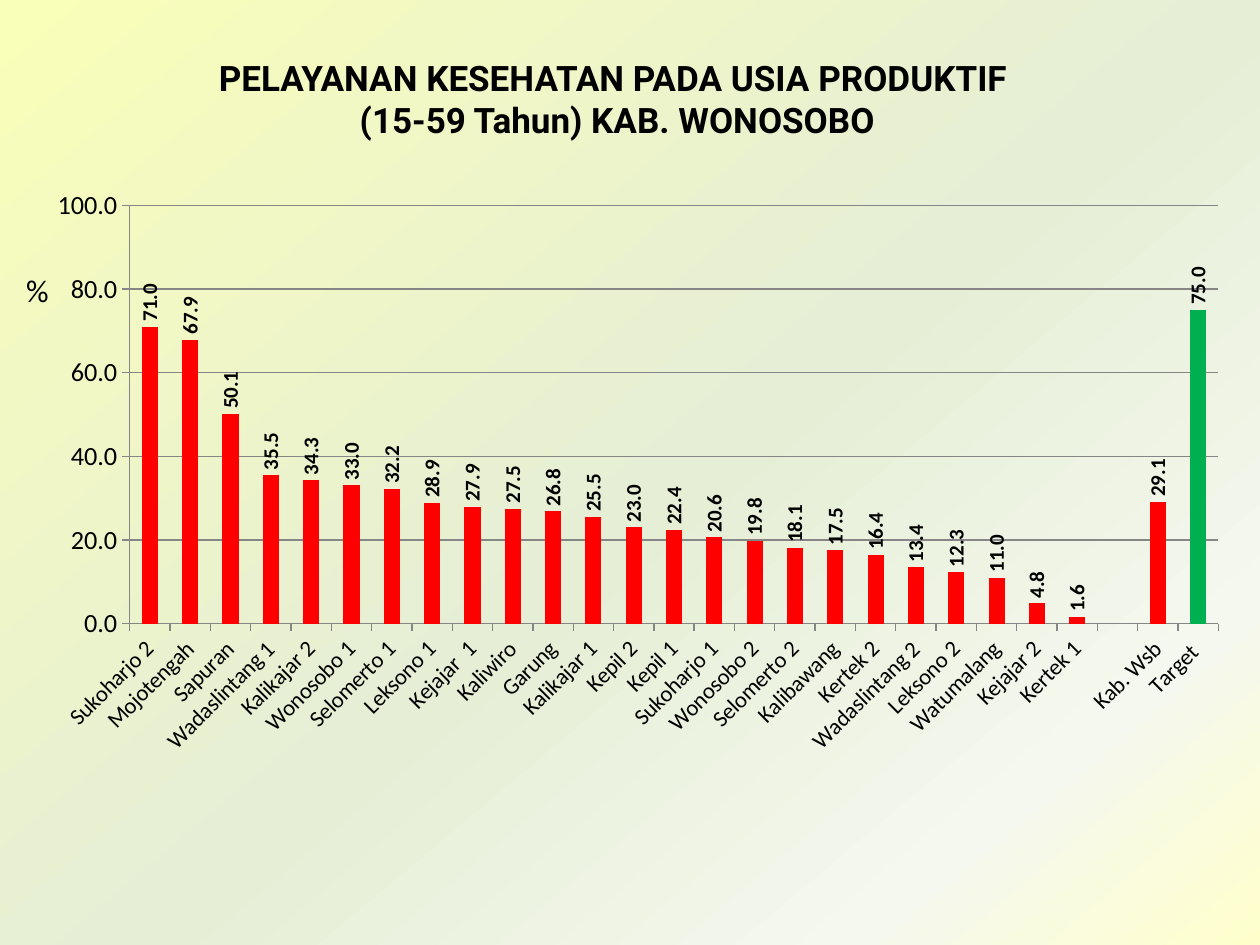
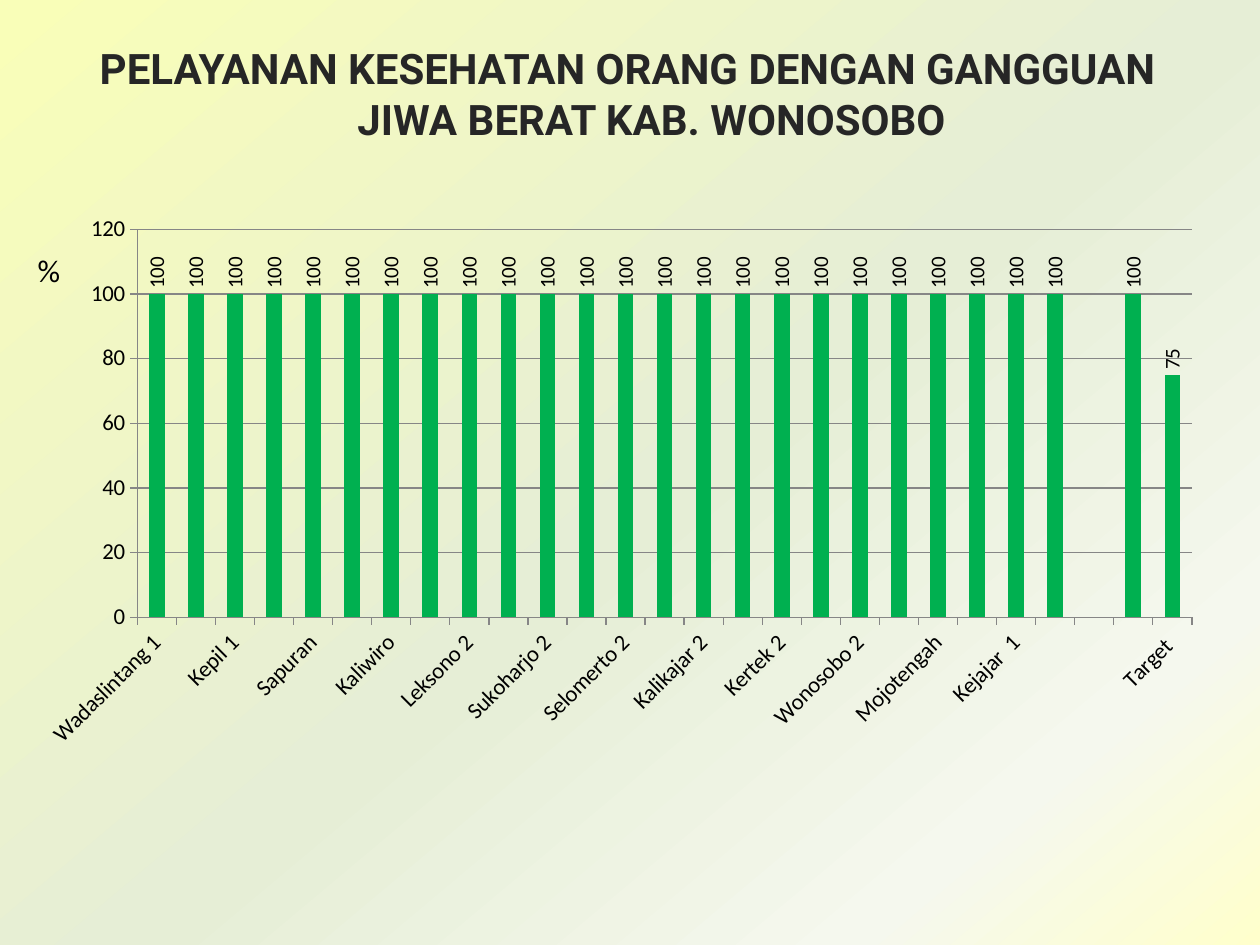
from lxml import etree
from pptx import Presentation
from pptx.chart.data import CategoryChartData
from pptx.dml.color import RGBColor
from pptx.enum.chart import XL_CHART_TYPE, XL_LABEL_POSITION, XL_TICK_MARK
from pptx.enum.text import MSO_ANCHOR, PP_ALIGN
from pptx.oxml.ns import qn
from pptx.util import Inches, Pt

COLUMNS = XL_CHART_TYPE.COLUMN_CLUSTERED
OUTSIDE_END = XL_LABEL_POSITION.OUTSIDE_END
TICK_OUTSIDE = XL_TICK_MARK.OUTSIDE
TOP, MIDDLE = MSO_ANCHOR.TOP, MSO_ANCHOR.MIDDLE
LEFT, CENTER = PP_ALIGN.LEFT, PP_ALIGN.CENTER

TITLE_FONT, BODY_FONT = "Roboto", "Calibri"
BLACK, DARK, GRAY = "000000", "262626", "868686"
RED, GREEN = "FF0000", "00B050"
GRADIENT_ANGLE = 50
GRADIENT_STOPS = [(0, "F9FEB8", 100), (53, "E6EED6", 100),
                  (83, "F5F8EE", 100), (100, "FFFFCC", 33)]

SUMMARY = ["", "Kab. Wsb", "Target "]
PRODUCTIVE_AGE = {
    "Sukoharjo 2": 71, "Mojotengah": 67.9, "Sapuran": 50.1,
    "Wadaslintang 1": 35.5, "Kalikajar 2": 34.3, "Wonosobo 1": 33,
    "Selomerto 1": 32.2, "Leksono 1": 28.9, "Kejajar  1": 27.9,
    "Kaliwiro": 27.5, "Garung": 26.8, "Kalikajar 1": 25.5, "Kepil 2": 23,
    "Kepil 1": 22.4, "Sukoharjo 1": 20.6, "Wonosobo 2": 19.8,
    "Selomerto 2": 18.1, "Kalibawang": 17.5, "Kertek 2": 16.4,
    "Wadaslintang 2": 13.4, "Leksono 2": 12.3, "Watumalang": 11,
    "Kejajar 2": 4.8, "Kertek 1": 1.6,
}
MENTAL_HEALTH_CENTRES = [
    "Wadaslintang 1", "Wadaslintang 2", "Kepil 1", "Kepil 2", "Sapuran",
    "Kalibawang", "Kaliwiro", "Leksono 1", "Leksono 2", "Sukoharjo 1",
    "Sukoharjo 2", "Selomerto 1", "Selomerto 2", "Kalikajar 1", "Kalikajar 2",
    "Kertek 1", "Kertek 2", "Wonosobo 1", "Wonosobo 2", "Watumalang",
    "Mojotengah", "Garung", "Kejajar  1", "Kejajar 2",
]


def color(hex_text):
    """Turn a hex string into a colour."""
    return RGBColor.from_string(hex_text)


def set_background(master):
    """Give every slide the shared diagonal gradient."""
    master.background.fill.gradient()
    gradient = master.element.find(".//" + qn("a:gradFill"))
    stops = gradient.find(qn("a:gsLst"))
    for stop in list(stops):
        stops.remove(stop)
    for position, hex_text, opacity in GRADIENT_STOPS:
        stop = etree.SubElement(stops, qn("a:gs"), pos=str(position * 1000))
        tint = etree.SubElement(stop, qn("a:srgbClr"), val=hex_text)
        if opacity < 100:
            etree.SubElement(tint, qn("a:alpha"), val=str(opacity * 1000))
    gradient.find(qn("a:lin")).set("ang", str(GRADIENT_ANGLE * 60000))


def add_text(page, text, at, size, font=BODY_FONT, ink=BLACK, bold=False,
             align=LEFT, anchor=TOP, wrap=True, hanging=0):
    """Add a text box with one format throughout."""
    box = page.shapes.add_textbox(*map(Inches, at))
    frame = box.text_frame
    frame.word_wrap = wrap
    frame.vertical_anchor = anchor
    para = frame.paragraphs[0]
    para.text = text
    para.alignment = align
    if hanging:
        properties = para._p.get_or_add_pPr()
        properties.set("marL", str(Inches(hanging)))
        properties.set("indent", str(-Inches(hanging)))
    for span in para.runs:
        span.font.name = font
        span.font.size = Pt(size)
        span.font.bold = bold
        span.font.color.rgb = color(ink)


def add_title(page, text, at, size, **options):
    """Add a bold centred slide title."""
    add_text(page, text, at, size, font=TITLE_FONT, bold=True, align=CENTER, **options)


def rotate_text(element, degrees):
    """Rotate the text of a chart axis or its data labels."""
    body = element.find(qn("c:txPr")).find(qn("a:bodyPr"))
    body.set("rot", str(degrees * 60000))
    body.set("vert", "horz")


def place_plot(chart, at, plot_at):
    """Fix the inner plot area, given in slide inches."""
    area = chart._chartSpace.chart.plotArea
    for old in area.findall(qn("c:layout")):
        area.remove(old)
    layout = etree.Element(qn("c:layout"))
    area.insert(0, layout)
    manual = etree.SubElement(layout, qn("c:manualLayout"))
    left, top, width, height = at
    plot_left, plot_top, plot_width, plot_height = plot_at
    settings = {
        "layoutTarget": "inner", "xMode": "edge", "yMode": "edge",
        "x": (plot_left - left) / width, "y": (plot_top - top) / height,
        "w": plot_width / width, "h": plot_height / height,
    }
    for name, value in settings.items():
        etree.SubElement(manual, qn("c:" + name), val=str(value))


def style_axis(axis, size):
    """Apply the shared axis line, ticks and label size."""
    axis.major_tick_mark = TICK_OUTSIDE
    axis.format.line.color.rgb = color(GRAY)
    axis.format.line.width = Pt(0.75)
    axis.tick_labels.font.size = Pt(size)


def add_column_chart(page, at, plot_at, names, values, fill, top_value,
                     number_format="General", value_size=13, bold=False):
    """Add a column chart and return its series."""
    chart_data = CategoryChartData()
    chart_data.categories = names
    chart_data.add_series("Series 1", values)
    chart = page.shapes.add_chart(COLUMNS, *map(Inches, at), chart_data).chart
    chart.has_legend = chart.has_title = False
    chart.font.name = BODY_FONT
    chart.font.size = Pt(10)
    chart.font.color.rgb = color(BLACK)
    place_plot(chart, at, plot_at)

    style_axis(chart.category_axis, 13)
    rotate_text(chart.category_axis._element, -45)
    scale = chart.value_axis
    style_axis(scale, value_size)
    scale.minimum_scale, scale.maximum_scale, scale.major_unit = 0, top_value, 20
    scale.tick_labels.number_format = number_format
    scale.tick_labels.number_format_is_linked = False
    scale.major_gridlines.format.line.color.rgb = color(GRAY)
    scale.major_gridlines.format.line.width = Pt(0.75)

    plot = chart.plots[0]
    plot.gap_width = 150
    plot.vary_by_categories = False
    series = plot.series[0]
    series.format.fill.solid()
    series.format.fill.fore_color.rgb = color(fill)
    labels = series.data_labels
    labels.show_value = True
    labels.position = OUTSIDE_END
    labels.number_format = number_format
    labels.number_format_is_linked = False
    labels.font.size = Pt(12)
    labels.font.bold = bold
    rotate_text(labels._element, -90)
    return series


def build_productive_age(page):
    """Show service coverage for people of productive age."""
    add_title(page, "PELAYANAN KESEHATAN PADA USIA PRODUKTIF \n(15-59 Tahun) KAB. WONOSOBO",
              (0.28, 0.36, 9.24, 0.85), 20, anchor=MIDDLE)
    add_text(page, "%", (0.11, 2.1, 0.31, 0.4), 18, wrap=False)
    names = list(PRODUCTIVE_AGE) + SUMMARY
    values = list(PRODUCTIVE_AGE.values()) + [None, 29.1, 75]
    series = add_column_chart(page, (0.26, 1.42, 9.59, 4.67), (1.03, 1.63, 8.64, 3.32),
                              names, values, RED, 100, number_format="0.0",
                              value_size=15, bold=True)
    target = series.points[len(names) - 1].format.fill
    target.solid()
    target.fore_color.rgb = color(GREEN)


def build_mental_health(page):
    """Show service coverage for people with severe mental disorders."""
    add_title(page, "PELAYANAN KESEHATAN ORANG DENGAN GANGGUAN JIWA BERAT KAB. WONOSOBO",
              (0.44, 0.29, 9.08, 0.85), 24, ink=DARK, hanging=0.38)
    add_text(page, "%", (0.2, 1.94, 0.31, 0.4), 18, wrap=False)
    values = [100] * len(MENTAL_HEALTH_CENTRES) + [None, 100, 75]
    add_column_chart(page, (0.2, 1.62, 9.45, 4.41), (1.09, 1.82, 8.37, 3.08),
                     MENTAL_HEALTH_CENTRES + SUMMARY, values, GREEN, 120)


def main():
    """Build and save the deck."""
    deck = Presentation()
    deck.slide_width, deck.slide_height = Inches(10), Inches(7.5)
    set_background(deck.slide_master)
    for build in (build_productive_age, build_mental_health):
        build(deck.slides.add_slide(deck.slide_layouts[6]))
    deck.save("out.pptx")


if __name__ == "__main__":
    main()
